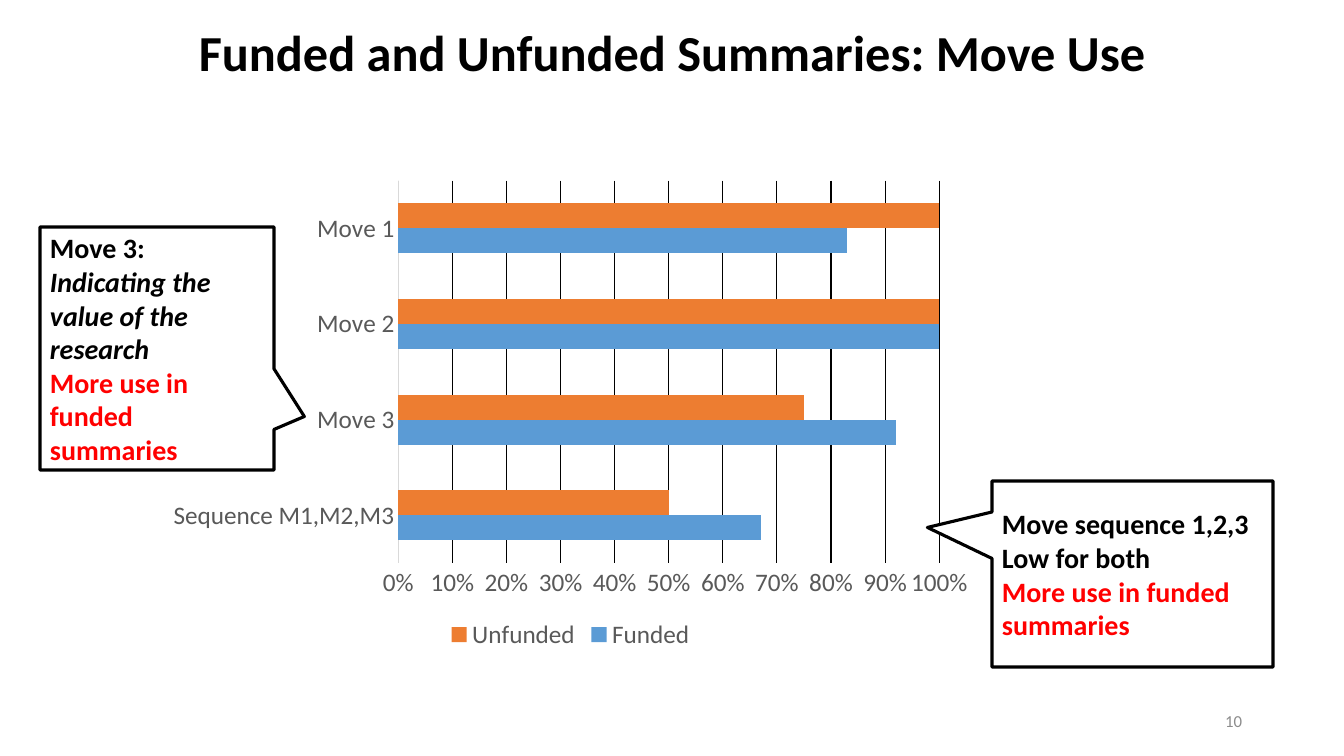
"""Build the slide on move use in funded and unfunded summaries."""
import pptx
import pptx.chart.data
import pptx.dml.color
import pptx.enum.chart
import pptx.enum.shapes
import pptx.enum.text
import pptx.util

EMU_PER_PX = 914400 / 100.8
SLIDE_SIZE = (1344, 756)
FONT = "Calibri"
COLORS = {"black": "000000", "white": "FFFFFF", "red": "FF0000", "label": "595959",
          "axis": "D9D9D9", "number": "8C8C8C", "blue": "5B9BD5", "orange": "ED7D31"}
ALIGN = pptx.enum.text.PP_ALIGN

BOLD = {"size": 20, "color": "black", "bold": True}
RED = {**BOLD, "color": "red"}
HEADINGS = [
    ((93, 15, 1159, 73), ALIGN.CENTER,
     [[("Funded and Unfunded Summaries: Move Use", {**BOLD, "size": 36})]]),
    ((950, 701, 302, 40), ALIGN.RIGHT, [[("10", {"size": 12, "color": "number"})]]),
]
CALLOUTS = [
    ((40, 227, 234, 243), (0.63, 0.28),
     [[("Move 3: ", BOLD), ("Indicating the value of the research", {**BOLD, "italic": True})],
      [("More use in funded summaries", RED)]]),
    ((992, 481, 281, 186), (-0.73, -0.25),
     [[("Move sequence 1,2,3 Low for both", BOLD)],
      [("More use in funded summaries", RED)]]),
]
CHART_BOX = (157, 171, 827, 484)
MOVES = ["Sequence M1,M2,M3", "Move 3", "Move 2", "Move 1"]
SERIES = [("Funded", (0.67, 0.92, 1, 0.83), "blue"),
          ("Unfunded", (0.5, 0.75, 1, 1), "orange")]


def px(length):
    return pptx.util.Emu(round(length * EMU_PER_PX))


def rgb(name):
    return pptx.dml.color.RGBColor.from_string(COLORS[name])


def set_font(font, size, color, bold=False, italic=False):
    font.name, font.size = FONT, pptx.util.Pt(size)
    font.bold, font.italic = bold, italic
    font.color.rgb = rgb(color)


def write(frame, paragraphs, align):
    frame.word_wrap = True
    frame.vertical_anchor = pptx.enum.text.MSO_ANCHOR.MIDDLE
    for index, runs in enumerate(paragraphs):
        paragraph = frame.add_paragraph() if index else frame.paragraphs[0]
        paragraph.alignment = align
        for text, style in runs:
            run = paragraph.add_run()
            run.text = text
            set_font(run.font, **style)


def set_line(line, color, width):
    line.color.rgb = rgb(color)
    line.width = pptx.util.Pt(width)


def add_move_chart(slide):
    move_data = pptx.chart.data.CategoryChartData(number_format="0%")
    move_data.categories = MOVES
    for name, shares, _ in SERIES:
        move_data.add_series(name, shares)
    chart = slide.shapes.add_chart(pptx.enum.chart.XL_CHART_TYPE.BAR_CLUSTERED,
                                   *map(px, CHART_BOX), move_data).chart
    set_font(chart.font, 18, "label")
    chart.has_title = False
    chart.has_legend = True
    chart.legend.position = pptx.enum.chart.XL_LEGEND_POSITION.BOTTOM
    chart.legend.include_in_layout = False
    set_font(chart.legend.font, 18, "label")

    plot = chart.plots[0]
    plot.gap_width = 182
    plot.overlap = 0
    plot.vary_by_categories = False
    for series, (_, _, color) in zip(plot.series, SERIES):
        series.format.fill.solid()
        series.format.fill.fore_color.rgb = rgb(color)

    moves, shares = chart.category_axis, chart.value_axis
    for axis in (moves, shares):
        axis.major_tick_mark = axis.minor_tick_mark = pptx.enum.chart.XL_TICK_MARK.NONE
        set_font(axis.tick_labels.font, 18, "label")
    set_line(moves.format.line, "axis", 0.75)
    shares.format.line.fill.background()
    shares.minimum_scale, shares.maximum_scale, shares.major_unit = 0, 1, 0.1
    shares.has_major_gridlines = True
    set_line(shares.major_gridlines.format.line, "black", 0.75)
    shares.tick_labels.number_format = "0%"
    shares.tick_labels.number_format_is_linked = False


def add_callout(slide, box, tip, paragraphs):
    callout = slide.shapes.add_shape(
        pptx.enum.shapes.MSO_SHAPE.RECTANGULAR_CALLOUT, *map(px, box))
    callout.shadow.inherit = False
    callout.adjustments[0], callout.adjustments[1] = tip
    callout.fill.solid()
    callout.fill.fore_color.rgb = rgb("white")
    set_line(callout.line, "black", 2.25)
    write(callout.text_frame, paragraphs, ALIGN.LEFT)


def main():
    deck = pptx.Presentation()
    deck.slide_width, deck.slide_height = map(px, SLIDE_SIZE)
    slide = deck.slides.add_slide(deck.slide_layouts[6])
    add_move_chart(slide)
    for box, align, paragraphs in HEADINGS:
        heading = slide.shapes.add_textbox(*map(px, box))
        write(heading.text_frame, paragraphs, align)
    for box, tip, paragraphs in CALLOUTS:
        add_callout(slide, box, tip, paragraphs)
    deck.save("out.pptx")


if __name__ == "__main__":
    main()
